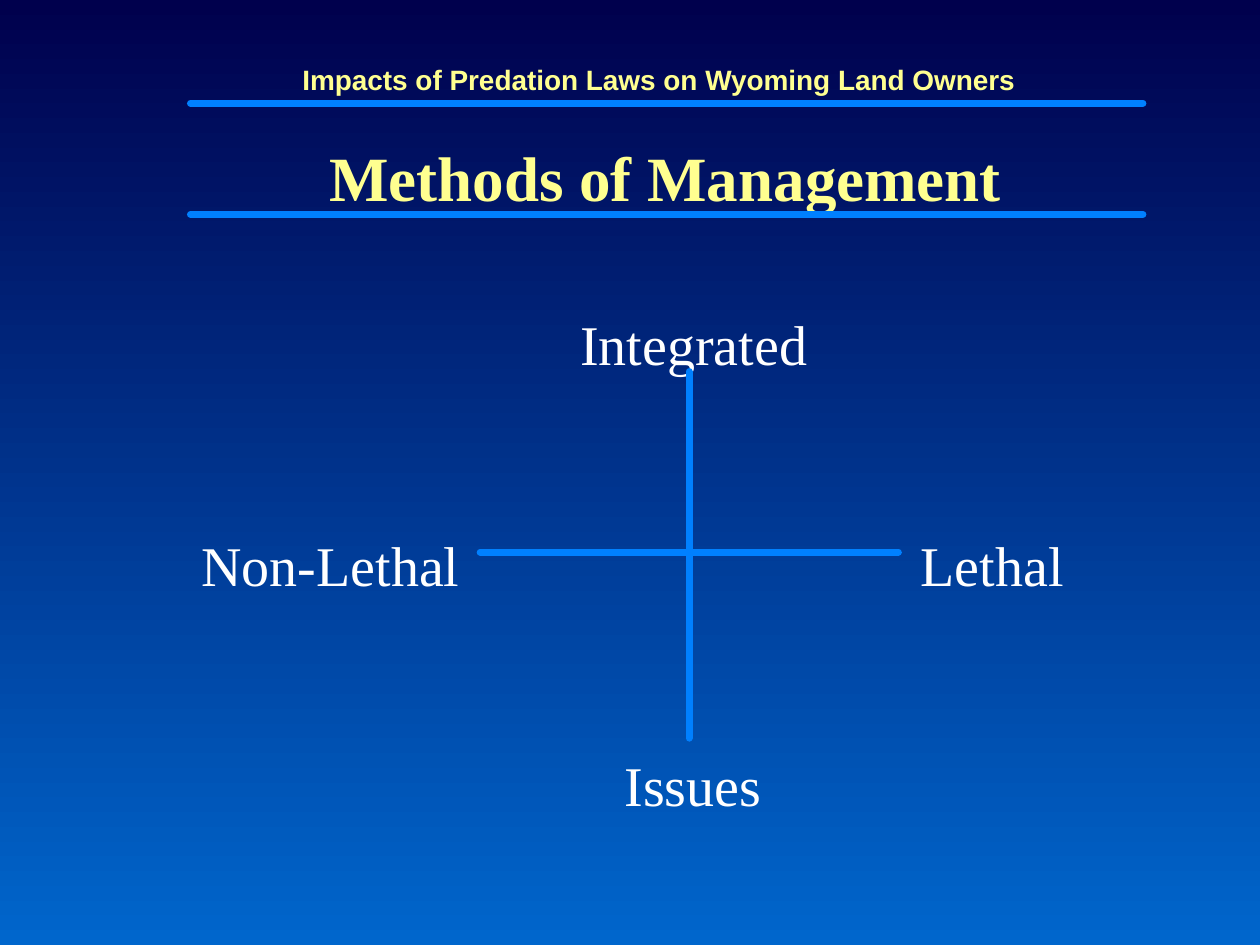
from pptx import Presentation, util as u
from pptx.dml.color import RGBColor
from pptx.enum import shapes, text
from pptx.oxml.ns import qn
from lxml import etree


def color(hex_value):
    return RGBColor.from_string(hex_value)


class ManagementSlide:
    SERIF, SANS = "Times New Roman", "Arial"
    YELLOW, WHITE, BLUE = "FFFF90", "FFFFFF", "0080FF"
    NIGHT, DAY = "00004D", "0066CC"

    def __init__(self, deck):
        self.slide = deck.slides.add_slide(deck.slide_layouts[5])

    def background(self):
        fill = self.slide.background.fill
        fill.gradient()
        fill.gradient_angle = 270
        for stop, shade in zip(fill.gradient_stops, (self.NIGHT, self.DAY)):
            stop.color.rgb = color(shade)

    def set_text(self, box, words, font, size, shade, bold=False, inset=0.15):
        frame = box.text_frame
        frame.word_wrap = True
        frame.auto_size = text.MSO_AUTO_SIZE.NONE
        frame.vertical_anchor = text.MSO_ANCHOR.TOP
        frame.margin_left = frame.margin_right = frame.margin_bottom = 0
        frame.margin_top = u.Cm(inset)
        paragraph = frame.paragraphs[0]
        paragraph.alignment = text.PP_ALIGN.CENTER
        run = paragraph.add_run()
        run.text = words
        run.font.name, run.font.size, run.font.bold = font, u.Pt(size), bold
        run.font.color.rgb = color(shade)

    def title(self, words, left, top, width, height):
        heading = self.slide.shapes.title
        heading.left, heading.top = u.Cm(left), u.Cm(top)
        heading.width, heading.height = u.Cm(width), u.Cm(height)
        self.set_text(heading, words, self.SERIF, 36, self.YELLOW, bold=True)

    def text_box(self, left, top, width, height):
        return self.slide.shapes.add_textbox(
            u.Cm(left), u.Cm(top), u.Cm(width), u.Cm(height))

    def running_head(self, words, *place):
        self.set_text(self.text_box(*place), words, self.SANS, 16, self.YELLOW,
                      bold=True, inset=0.04)

    def label(self, words, left, top, width):
        self.set_text(self.text_box(left, top, width, 1.24), words,
                      self.SERIF, 32, self.WHITE)

    def line(self, x1, y1, x2, y2):
        rule = self.slide.shapes.add_connector(
            shapes.MSO_CONNECTOR.STRAIGHT,
            u.Cm(x1), u.Cm(y1), u.Cm(x2), u.Cm(y2))
        rule.line.color.rgb = color(self.BLUE)
        rule.line.width = u.Pt(4)
        properties = rule._element.spPr
        properties.find(qn("a:ln")).set("cap", "rnd")
        etree.SubElement(properties, qn("a:effectLst"))


def main():
    deck = Presentation()
    deck.slide_width, deck.slide_height = u.Cm(25.4), u.Cm(19.05)
    page = ManagementSlide(deck)
    page.background()

    # Heading between two rules
    page.running_head("Impacts of Predation Laws on Wyoming Land Owners",
                      4.88, 1.22, 16.81, 0.61)
    page.title("Methods of Management", 5.08, 2.64, 16.66, 1.37)
    for rule_y in (2.08, 4.32):
        page.line(3.84, rule_y, 23.04, rule_y)

    # Labels at the four ends of the cross
    for words, left, top, width in (
            ("Integrated", 9.86, 6.1, 8.25),
            ("Non-Lethal", 2.54, 10.54, 8.25),
            ("Lethal", 15.88, 10.54, 8.25),
            ("Issues", 11.43, 14.99, 5.08)):
        page.label(words, left, top, width)

    # Cross
    page.line(13.89, 7.49, 13.89, 14.88)
    page.line(9.68, 11.13, 18.11, 11.13)

    deck.save("out.pptx")


if __name__ == "__main__":
    main()
